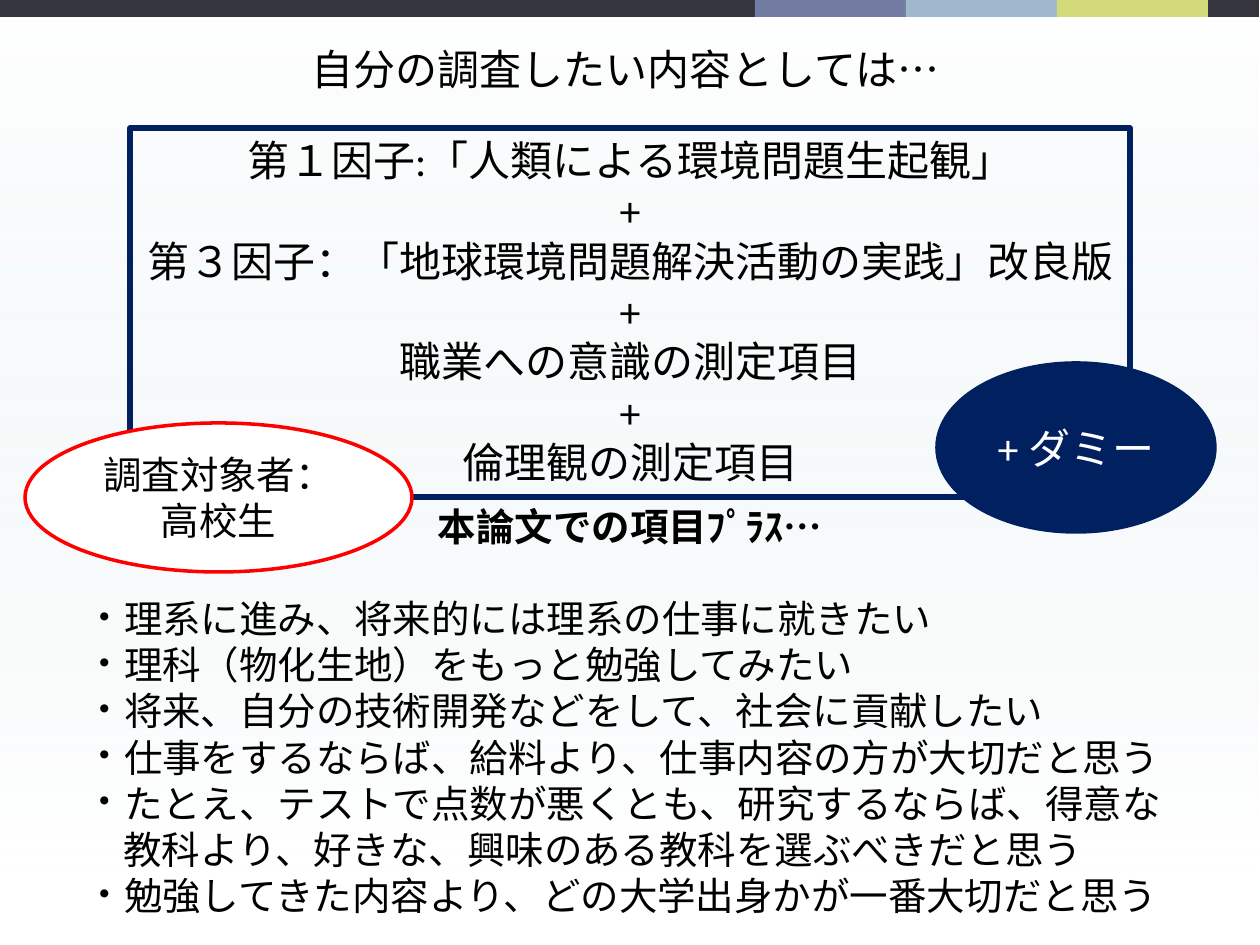
from lxml.etree import SubElement
from pptx import Presentation
from pptx.dml.color import RGBColor
from pptx.enum.shapes import MSO_SHAPE
from pptx.enum.text import MSO_ANCHOR, MSO_AUTO_SIZE, PP_ALIGN
from pptx.oxml.ns import qn
from pptx.util import Emu, Pt

FONT = "Calibri"
NAVY, BLACK, WHITE, RED = "002060", "000000", "FFFFFF", "FF0000"

TITLE = "自分の調査したい内容としては…"
FACTORS = [
    "第１因子:「人類による環境問題生起観」",
    "第３因子：「地球環境問題解決活動の実践」改良版",
    "職業への意識の測定項目",
    "倫理観の測定項目",
]
ITEMS_HEADING = "本論文での項目ﾌﾟﾗｽ…"
ITEMS = [
    ["理系に進み、将来的には理系の仕事に就きたい"],
    ["理科（物化生地）をもっと勉強してみたい"],
    ["将来、自分の技術開発などをして、社会に貢献したい"],
    ["仕事をするならば、給料より、仕事内容の方が大切だと思う"],
    ["たとえ、テストで点数が悪くとも、研究するならば、得意な",
     "教科より、好きな、興味のある教科を選ぶべきだと思う"],
    ["勉強してきた内容より、どの大学出身かが一番大切だと思う"],
]


def px(n):
    return Emu(round(n * 914400 / 126))


def rgb(color):
    return RGBColor.from_string(color)


def add_panel(s, kind, box, fill=None, line=None, width=2):
    sp = s.shapes.add_shape(kind, *map(px, box))
    sp.shadow.inherit = False
    if fill:
        sp.fill.solid()
        sp.fill.fore_color.rgb = rgb(fill)
    else:
        sp.fill.background()
    if line:
        sp.line.color.rgb = rgb(line)
        sp.line.width = Pt(width)
    else:
        sp.line.fill.background()
    return sp


def add_lines(sp, lines, size, color=BLACK, align=PP_ALIGN.CENTER,
              anchor=MSO_ANCHOR.TOP, wrap=False):
    tf = sp.text_frame
    tf.text = "\n".join(lines)
    tf.word_wrap = wrap
    tf.auto_size = MSO_AUTO_SIZE.NONE
    tf.vertical_anchor = anchor
    for p in tf.paragraphs:
        p.alignment = align
        p.space_before = Pt(0)
        for r in p.runs:
            r.font.name = FONT
            r.font.size = Pt(size)
            r.font.color.rgb = rgb(color)
    return tf.paragraphs


def place(s, sp, box):
    """Move a placeholder to the box and in front of everything so far."""
    sp.left, sp.top, sp.width, sp.height = map(px, box)
    s.shapes._spTree.append(sp._element)


def set_bullet(p, left, hang=0, char=None):
    pPr = p._p.get_or_add_pPr()
    pPr.set("marL", str(px(left)))
    pPr.set("indent", str(-px(hang)))
    if char:
        SubElement(pPr, qn("a:buFont"), typeface=FONT)
        SubElement(pPr, qn("a:buChar"), char=char)
    else:
        SubElement(pPr, qn("a:buNone"))


def add_backdrop(s, box):
    sp = add_panel(s, MSO_SHAPE.RECTANGLE, box)
    sp.fill.gradient()
    sp.fill.gradient_angle = 90
    stops = [(0.01, "DDE9EC", 0), (1, WHITE, 92)]
    for stop, (position, color, opacity) in zip(sp.fill.gradient_stops, stops):
        stop.position = position
        stop.color.rgb = rgb(color)
    for clr, (_, _, opacity) in zip(sp._element.spPr.iter(qn("a:srgbClr")), stops):
        SubElement(clr, qn("a:alpha"), val=str(opacity * 1000))


def add_top_band(s, box):
    x, y, w, h = box
    add_panel(s, MSO_SHAPE.RECTANGLE, box, "35353E")
    step = w * 12 // 100
    for i, color in enumerate(["727CA3", "9FB8CD", "D2DA7A"]):
        add_panel(s, MSO_SHAPE.RECTANGLE, (x + w * 6 // 10 + i * step, y, step, h), color)


def add_title(s, box):
    sp = s.shapes.title
    place(s, sp, box)
    add_lines(sp, [TITLE], 24, align=PP_ALIGN.LEFT, wrap=True)


def add_factors(s, box):
    sp = add_panel(s, MSO_SHAPE.RECTANGLE, box, line=NAVY, width=3)
    add_lines(sp, "\n+\n".join(FACTORS).split("\n"), 24)


def add_items(s, box):
    sp = s.placeholders[1]
    place(s, sp, box)
    lines = [line for item in ITEMS for line in item]
    starts = [item[0] for item in ITEMS]
    heading, *rest = add_lines(sp, [ITEMS_HEADING] + lines, 22,
                               align=PP_ALIGN.LEFT, wrap=True)
    heading.alignment = PP_ALIGN.CENTER
    heading.runs[0].font.bold = True
    set_bullet(heading, 0)
    rest[0].space_before = Pt(26)
    for p in rest:
        if p.text in starts:
            set_bullet(p, 13, 13, "・")
        else:
            set_bullet(p, 38)


def add_oval(s, box, lines, size, color, fill, line):
    sp = add_panel(s, MSO_SHAPE.OVAL, box, fill, line)
    add_lines(sp, lines, size, color, anchor=MSO_ANCHOR.MIDDLE)


def main():
    prs = Presentation()
    prs.slide_width, prs.slide_height = px(1260), px(945)
    s = prs.slides.add_slide(prs.slide_layouts[1])
    add_backdrop(s, (-1, 0, 1260, 867))
    add_top_band(s, (-1, -3, 1260, 20))
    add_title(s, (299, 37, 662, 63))
    add_factors(s, (130, 128, 1000, 369))
    add_items(s, (73, 497, 1114, 432))
    add_oval(s, (937, 363, 278, 169), ["+ ダミー"], 24, WHITE, NAVY, NAVY)
    add_oval(s, (25, 423, 387, 149), ["調査対象者：", "高校生"], 22, BLACK, WHITE, RED)
    prs.save("out.pptx")


if __name__ == "__main__":
    main()
